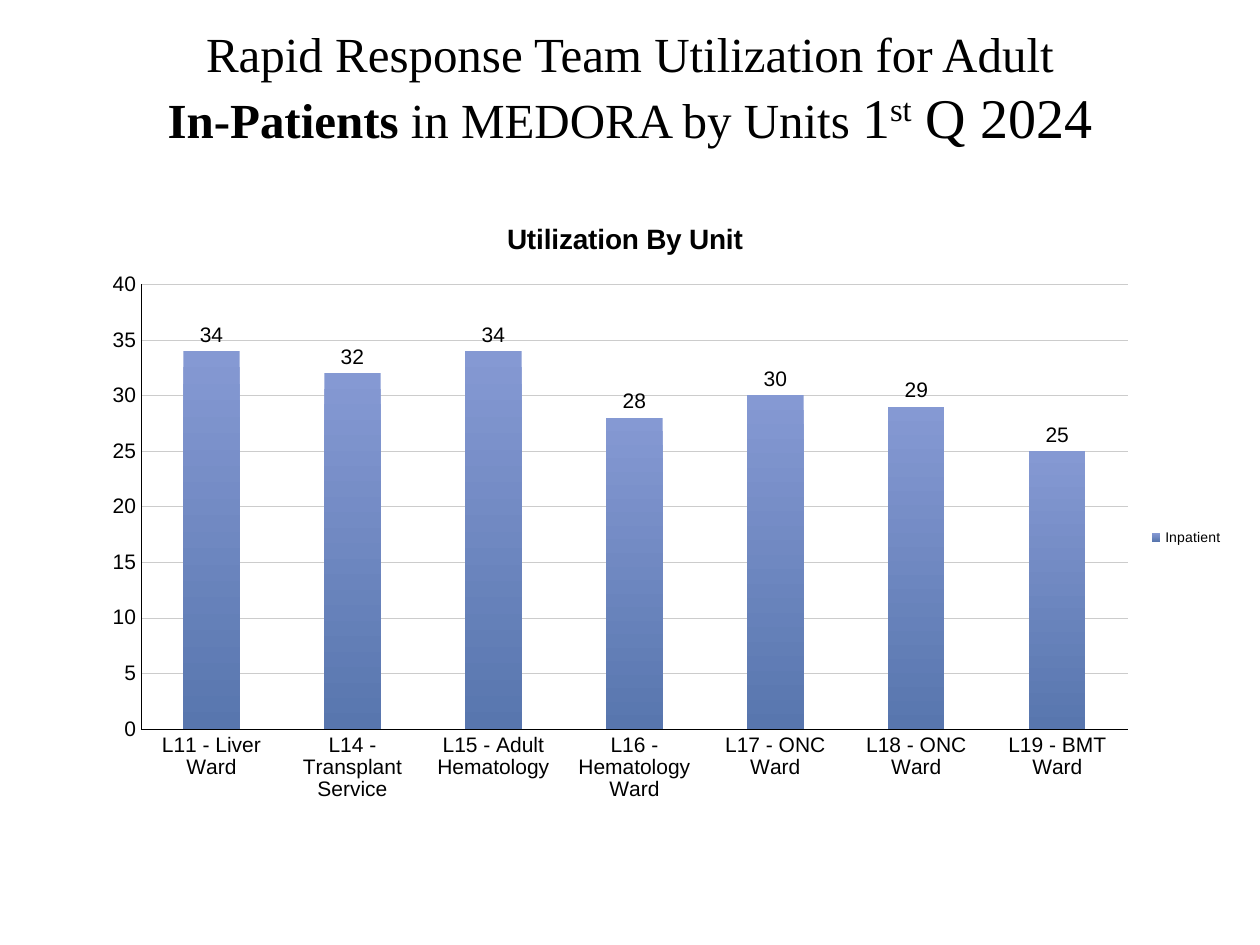
from lxml.etree import SubElement, Element
from pptx import Presentation
from pptx.chart.data import CategoryChartData
from pptx.dml.color import RGBColor
from pptx.enum.chart import XL_CHART_TYPE, XL_LABEL_POSITION, XL_LEGEND_POSITION, XL_TICK_MARK
from pptx.enum.text import MSO_ANCHOR, MSO_AUTO_SIZE, PP_ALIGN
from pptx.oxml.ns import qn
from pptx.util import Cm, Pt

HUES = {"ink": "000000", "grid": "CCCCCC", "top": "8599D3", "base": "5876AE"}
UNITS = {
    "L11 - Liver Ward": 34,
    "L14 - Transplant Service": 32,
    "L15 - Adult Hematology": 34,
    "L16 - Hematology Ward": 28,
    "L17 - ONC Ward": 30,
    "L18 - ONC Ward": 29,
    "L19 - BMT Ward": 25,
}


def hue(name):
    """Return the named colour."""
    return RGBColor.from_string(HUES[name])


def style(font, size, face="Arial", bold=False):
    """Format a font."""
    font.size, font.name, font.bold = Pt(size), face, bold
    font.color.rgb = hue("ink")


def write(para, text, size=28, face="Times New Roman", bold=False, lift=0):
    """Add a formatted run, raised by lift percent."""
    run = para.add_run()
    run.text = text
    style(run.font, size, face, bold)
    if lift:
        run.font._element.set("baseline", str(lift * 1000))


def rule(line, name):
    """Make a chart line a thin one of the named colour."""
    line.color.rgb = hue(name)
    line.width = Pt(0.25)


def place(node, **spots):
    """Give a chart part a fixed place, in fractions of the chart."""
    layout = node.find(qn("c:layout"))
    if layout is None:
        layout = Element(qn("c:layout"))
        node.insert(0, layout)
    manual = SubElement(layout, qn("c:manualLayout"))
    if "w" in spots:
        SubElement(manual, qn("c:layoutTarget")).set("val", "inner")
    for key in "xy":
        SubElement(manual, qn(f"c:{key}Mode")).set("val", "edge")
    for key, spot in spots.items():
        SubElement(manual, qn(f"c:{key}")).set("val", str(spot))


def add_title(slide):
    """Fill the title placeholder."""
    title = slide.shapes.title
    title.left, title.top, title.width, title.height = Cm(1.27), Cm(0.76), Cm(22.86), Cm(3.18)
    frame = title.text_frame
    frame.auto_size = MSO_AUTO_SIZE.NONE
    frame.vertical_anchor = MSO_ANCHOR.MIDDLE
    frame.margin_top, frame.margin_bottom = Cm(0), Cm(1.2)
    para = frame.paragraphs[0]
    para.alignment = PP_ALIGN.CENTER
    write(para, "Rapid Response Team Utilization for Adult")
    para.add_line_break()
    write(para, "In-Patients ", bold=True)
    write(para, "in MEDORA by Units ")
    write(para, "1", size=32)
    write(para, "st", size=32, lift=30)
    write(para, " Q 2024", size=32)


def set_axis(axis):
    """Format a chart axis."""
    axis.major_tick_mark = axis.minor_tick_mark = XL_TICK_MARK.NONE
    rule(axis.format.line, "ink")
    style(axis.tick_labels.font, 12)


def set_bars(plot):
    """Format the columns and their labels."""
    plot.gap_width = 150
    plot.vary_by_categories = False
    fill = plot.series[0].format.fill
    fill.gradient()
    fill.gradient_angle = 270
    for stop, name in zip(fill.gradient_stops, ("top", "base")):
        stop.color.rgb = hue(name)
    plot.has_data_labels = True
    labels = plot.data_labels
    labels.show_value = True
    labels.position = XL_LABEL_POSITION.OUTSIDE_END
    labels.number_format, labels.number_format_is_linked = "#0", False
    style(labels.font, 12)


def add_bars(slide):
    """Add the column chart of units."""
    data = CategoryChartData()
    data.categories = list(UNITS)
    data.add_series("Inpatient", list(UNITS.values()))
    chart = slide.shapes.add_chart(
        XL_CHART_TYPE.COLUMN_CLUSTERED, Cm(0.66), Cm(3.94), Cm(24.26), Cm(13.79), data
    ).chart
    style(chart.font, 10, "Calibri")
    chart.has_title = True
    para = chart.chart_title.text_frame.paragraphs[0]
    write(para, "Utilization By Unit", size=16, face="Arial", bold=True)
    place(chart.chart_title._element, x=0.39, y=0.03)
    place(chart._chartSpace.chart.plotArea, x=0.09, y=0.13, w=0.82, h=0.65)
    chart.has_legend = True
    chart.legend.position = XL_LEGEND_POSITION.RIGHT
    chart.legend.include_in_layout = False
    style(chart.legend.font, 8)
    for axis in (chart.category_axis, chart.value_axis):
        set_axis(axis)
    scale = chart.value_axis
    scale.minimum_scale, scale.maximum_scale, scale.major_unit = 0, 40, 5
    scale.tick_labels.number_format = "#0"
    scale.tick_labels.number_format_is_linked = False
    rule(scale.major_gridlines.format.line, "grid")
    set_bars(chart.plots[0])


def main():
    """Build and save the slide."""
    deck = Presentation()
    deck.slide_width, deck.slide_height = Cm(25.4), Cm(19.05)
    slide = deck.slides.add_slide(deck.slide_layouts[5])
    add_title(slide)
    add_bars(slide)
    deck.save("out.pptx")


if __name__ == "__main__":
    main()
